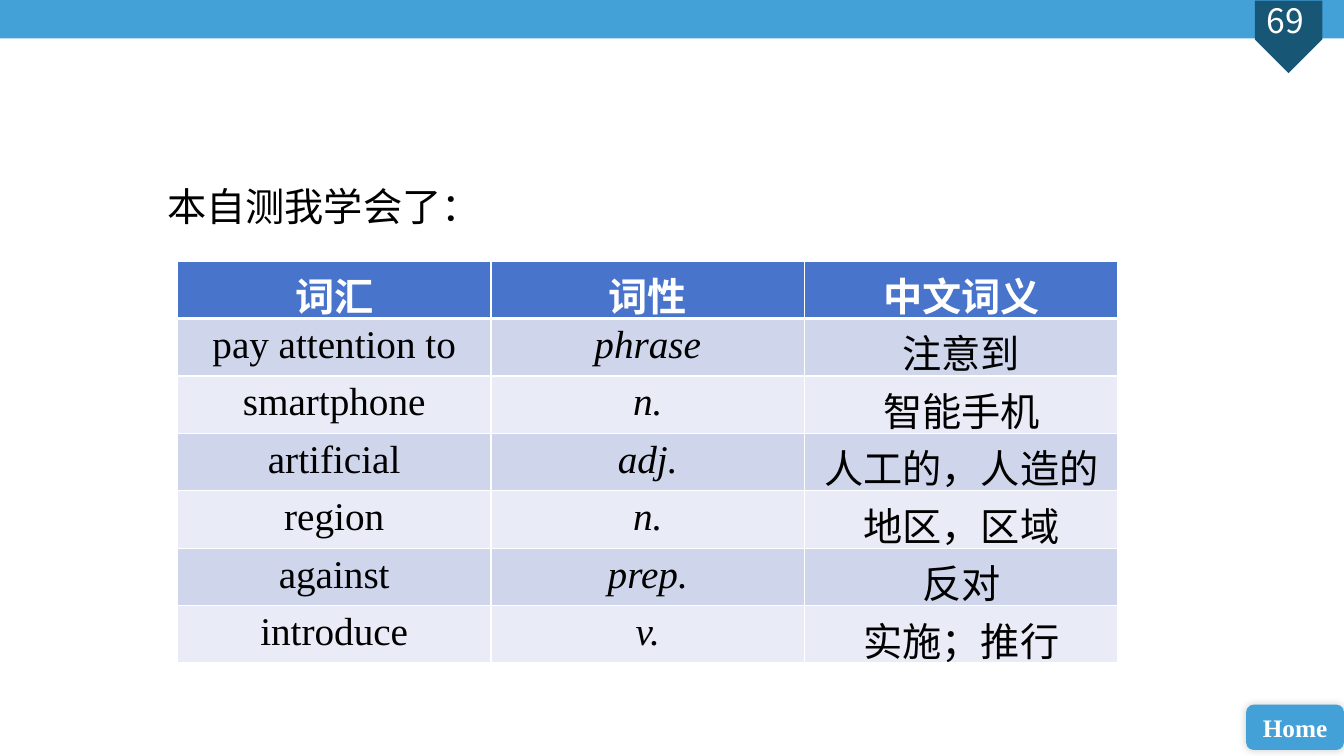
from dataclasses import dataclass

from lxml import etree
from pptx import Presentation
from pptx import util as u
from pptx.dml.color import RGBColor
from pptx.enum import shapes, text
from pptx.oxml import ns

PX = 9144  # EMU, 100 px to the inch

WHITE = RGBColor(0xFF, 0xFF, 0xFF)
BLACK = RGBColor(0x00, 0x00, 0x00)
SKY = RGBColor(0x43, 0xA1, 0xD8)
NAVY = RGBColor(0x18, 0x56, 0x75)
HEADER_BLUE = RGBColor(0x48, 0x74, 0xCB)
BANDS = (RGBColor(0xCF, 0xD6, 0xEC), RGBColor(0xE9, 0xEB, 0xF6))

SERIF = "Times New Roman"
COLUMN_WIDTH, ROW_HEIGHT = 311, 57


@dataclass(frozen=True)
class Box:
    left: int
    top: int
    width: int
    height: int

    def emu(self) -> tuple[int, ...]:
        return tuple(v * PX for v in (self.left, self.top, self.width, self.height))


@dataclass(frozen=True)
class Panel:
    kind: shapes.MSO_SHAPE
    box: Box
    fill: RGBColor
    rotation: int = 0


@dataclass(frozen=True)
class Word:
    term: str
    category: str
    meaning: str


BANNER = Panel(shapes.MSO_SHAPE.RECTANGLE, Box(0, 0, 1333, 38), SKY)
BADGE = Panel(shapes.MSO_SHAPE.PENTAGON, Box(1242, 3, 72, 67), NAVY, 90)
HOME = Panel(shapes.MSO_SHAPE.ROUNDED_RECTANGLE, Box(1236, 699, 97, 45), SKY)

HEADER = Word("词汇", "词性", "中文词义")
WORDS = (
    Word("pay attention to", "phrase", "注意到"),
    Word("smartphone", "n.", "智能手机"),
    Word("artificial", "adj.", "人工的，人造的"),
    Word("region", "n.", "地区，区域"),
    Word("against", "prep.", "反对"),
    Word("introduce", "v.", "实施；推行"),
)


def add_panel(slide, panel: Panel):
    shape = slide.shapes.add_shape(panel.kind, *panel.box.emu())
    shape.rotation = panel.rotation
    shape.shadow.inherit = False
    shape.fill.solid()
    shape.fill.fore_color.rgb = panel.fill
    shape.line.fill.background()
    return shape


def write(frame, content: str, size: int, name: str, color: RGBColor,
          align=text.PP_ALIGN.CENTER, bold: bool = False, italic: bool = False) -> None:
    frame.text = content
    paragraph = frame.paragraphs[0]
    paragraph.alignment = align
    font = paragraph.font
    font.size, font.name = u.Pt(size), name
    font.bold, font.italic = bold, italic
    font.color.rgb = color


def add_soft_shadow(shape) -> None:
    effects = shape._element.spPr.find(ns.qn("a:effectLst"))
    shadow = etree.SubElement(effects, ns.qn("a:outerShdw"), blurRad=str(u.Pt(6)),
                              dist="0", dir="18900000", algn="bl", rotWithShape="0")
    color = etree.SubElement(shadow, ns.qn("a:srgbClr"), val=str(BLACK))
    etree.SubElement(color, ns.qn("a:alpha"), val="20000")


def set_borders(cell, widths: dict[str, int]) -> None:
    properties = cell._tc.get_or_add_tcPr()
    for position, (side, width) in enumerate(widths.items()):
        line = etree.Element(ns.qn(f"a:{side}"), w=str(u.Pt(width)))
        fill = etree.SubElement(line, ns.qn("a:solidFill"))
        etree.SubElement(fill, ns.qn("a:srgbClr"), val=str(WHITE))
        properties.insert(position, line)


def add_vocabulary(slide) -> None:
    rows = (HEADER, *WORDS)
    box = Box(176, 259, 3 * COLUMN_WIDTH, len(rows) * ROW_HEIGHT)
    table = slide.shapes.add_table(len(rows), 3, *box.emu()).table
    for column in table.columns:
        column.width = COLUMN_WIDTH * PX
    for r, word in enumerate(rows):
        table.rows[r].height = ROW_HEIGHT * PX
        is_header = r == 0
        for c, content in enumerate((word.term, word.category, word.meaning)):
            cell = table.cell(r, c)
            # The lower inset offsets the upper one to keep rows compact
            cell.margin_top, cell.margin_bottom = 5 * PX, -5 * PX
            cell.fill.solid()
            cell.fill.fore_color.rgb = HEADER_BLUE if is_header else BANDS[(r - 1) % 2]
            write(cell.text_frame, content, 28, SERIF, WHITE if is_header else BLACK,
                  bold=is_header, italic=c == 1 and not is_header)
            set_borders(cell, {"lnL": 1, "lnR": 1, "lnT": 3 if r == 1 else 1,
                               "lnB": 3 if is_header else 1})


def main() -> None:
    presentation = Presentation()
    presentation.slide_width, presentation.slide_height = 1333 * PX, 750 * PX
    slide = presentation.slides.add_slide(presentation.slide_layouts[5])

    # Top banner and page badge
    add_panel(slide, BANNER)
    add_panel(slide, BADGE)
    number = slide.shapes.add_textbox(*Box(1226, 0, 98, 50).emu()).text_frame
    number.word_wrap = True
    number.margin_top = number.margin_bottom = 0
    write(number, "69", 24, "Noto Sans CJK SC", WHITE)

    # Home button
    home = add_panel(slide, HOME)
    add_soft_shadow(home)
    home.text_frame.word_wrap = False
    home.text_frame.vertical_anchor = text.MSO_ANCHOR.MIDDLE
    write(home.text_frame, "Home", 18, SERIF, WHITE, bold=True)

    # Heading and vocabulary table
    title = slide.shapes.title
    title.left, title.top, title.width, title.height = Box(156, 176, 387, 57).emu()
    frame = title.text_frame
    frame.auto_size = text.MSO_AUTO_SIZE.NONE
    frame.margin_top = frame.margin_bottom = 0
    frame.vertical_anchor = text.MSO_ANCHOR.MIDDLE
    write(frame, "本自测我学会了：", 28, "Calibri", BLACK, text.PP_ALIGN.LEFT)
    add_vocabulary(slide)

    presentation.save("out.pptx")


if __name__ == "__main__":
    main()
